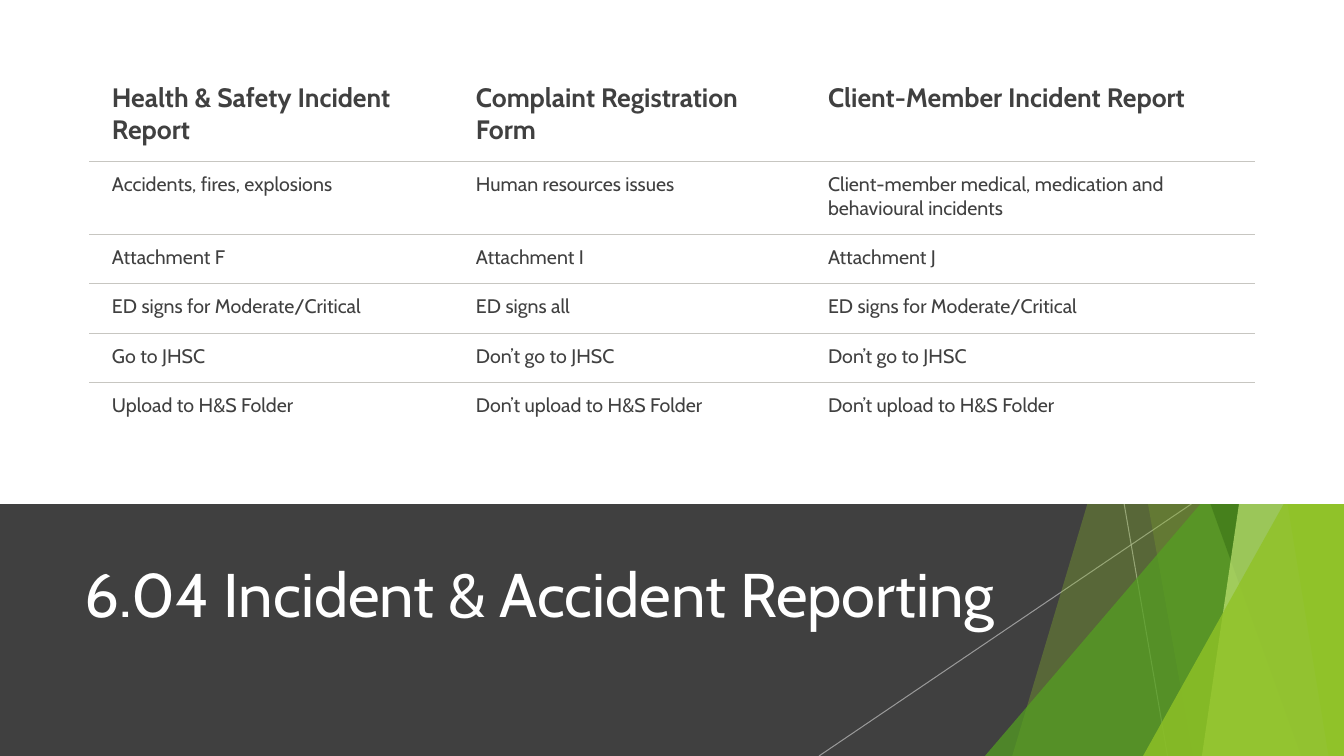
from lxml.etree import SubElement as Sub
from pptx import Presentation
from pptx.dml.color import RGBColor as RGB
from pptx.enum.shapes import MSO_CONNECTOR as Conn, MSO_SHAPE as Shape
from pptx.enum.text import MSO_ANCHOR as Anchor
from pptx.oxml import parse_xml
from pptx.oxml.ns import nsdecls, qn
from pptx.util import Pt

# Content
TITLE = "6.04 Incident & Accident Reporting"
ROWS = [
    ("Health & Safety Incident Report", "Complaint Registration Form",
     "Client-Member Incident Report"),
    ("Accidents, fires, explosions", "Human resources issues",
     "Client-member medical, medication and behavioural incidents"),
    ("Attachment F", "Attachment I", "Attachment J"),
    ("ED signs for Moderate/Critical", "ED signs all",
     "ED signs for Moderate/Critical"),
    ("Go to JHSC", "Don’t go to JHSC", "Don’t go to JHSC"),
    ("Upload to H&S Folder", "Don’t upload to H&S Folder",
     "Don’t upload to H&S Folder"),
]

# Format
WHITE = RGB(0xFF, 0xFF, 0xFF)
DARK = RGB(0x40, 0x40, 0x40)
GREY = RGB(0xBF, 0xBF, 0xBF)
RULE = RGB(0xC7, 0xC6, 0xC1)
LIME = RGB(0x90, 0xC2, 0x26)
GREEN = RGB(0x54, 0xA0, 0x21)
DEEP = RGB(0x3F, 0x78, 0x19)
PALE = RGB(0xC0, 0xE4, 0x74)
FONT = "Cabin"
HEAD = {"name": FONT, "size": Pt(19), "bold": True}
BODY = {"name": FONT, "size": Pt(14), "bold": False}
BIG = {"name": FONT, "size": Pt(44), "bold": False}
INSET = {"margin_left": Pt(15.8), "margin_top": Pt(7.9),
         "margin_right": Pt(11.5), "margin_bottom": Pt(7.9)}
FLUSH = {"word_wrap": True, "vertical_anchor": Anchor.MIDDLE}

# Layout
WIDE, HIGH, SPLIT = 960, 540, 360
COLS = [260, 251.5, 320.2]
TALL = [64.8, 52.2] + [35.3] * 4
RAYS = [(803, 834), (851, 585)]  # x at the split, x at the foot
# Facets: (top x, foot x, colour, opacity); wedges: (left, top, colour, opacity)
FACETS = [
    ("facet", 884, 723, LIME, 30),
    ("facet", 756, 852, LIME, 20),
    ("wedge", 703.5, 240, GREEN, 72),
    ("facet", 735, 929.5, DEEP, 70),
    ("facet", 938, 858.5, PALE, 70),
    ("facet", 861, 949, LIME, 65),
    ("wedge", 816.5, 283, LIME, 80),
]


def style(obj, fmt):
    for key, val in fmt.items():
        setattr(obj, key, val)


def fade(part, pct):
    for clr in part.iter(qn("a:srgbClr")):
        Sub(clr, qn("a:alpha"), val=str(pct * 1000))


def paint(shape, color, pct=100):
    shape.shadow.inherit = False
    shape.fill.solid()
    shape.fill.fore_color.rgb = color
    shape.line.fill.background()
    if pct < 100:
        fade(shape.fill._xPr, pct)


def write(frame, text, fmt, color):
    run = frame.paragraphs[0].add_run()
    run.text = text
    style(run.font, fmt)
    run.font.color.rgb = color


def border(cell, side):
    cell._tc.get_or_add_tcPr().append(parse_xml(
        f'<a:{side} {nsdecls("a")} w="9525"><a:solidFill>'
        f'<a:srgbClr val="{RULE}"/></a:solidFill></a:{side}>'))


deck = Presentation()
deck.slide_width, deck.slide_height = Pt(WIDE), Pt(HIGH)
slide = deck.slides.add_slide(deck.slide_layouts[6])
shapes = slide.shapes


def panel(top, high, color):
    paint(shapes.add_shape(Shape.RECTANGLE, 0, Pt(top), Pt(WIDE), Pt(high)), color)


# Dark band with thin rays
panel(SPLIT, HIGH - SPLIT, DARK)
for top, foot in RAYS:
    ray = shapes.add_connector(Conn.STRAIGHT, Pt(top), Pt(SPLIT), Pt(foot), Pt(HIGH))
    ray.line.color.rgb = GREY
    ray.line.width = Pt(0.75)
    fade(ray.line._ln, 70)
    Sub(ray._element.spPr, qn("a:effectLst"))

# Green facets, running up behind the white panel
for kind, a, b, color, pct in FACETS:
    if kind == "facet":
        pen = shapes.build_freeform(Pt(a), 0)
        pen.add_line_segments(
            [(Pt(WIDE), 0), (Pt(WIDE), Pt(HIGH)), (Pt(b), Pt(HIGH))])
        shape = pen.convert_to_shape()
    else:
        shape = shapes.add_shape(Shape.ISOSCELES_TRIANGLE, Pt(a), Pt(b),
                                 Pt(WIDE - a), Pt(HIGH - b))
        shape.adjustments[0] = 1
    paint(shape, color, pct)

# Title
box = shapes.add_textbox(Pt(53.5), Pt(375), Pt(677), Pt(104)).text_frame
style(box, FLUSH)
box.paragraphs[0].line_spacing = 0.9
write(box, TITLE, BIG, WHITE)

# White panel and table
panel(0, SPLIT, WHITE)
table = shapes.add_table(len(ROWS), len(COLS), Pt(64.2), Pt(50.4),
                         Pt(sum(COLS)), Pt(sum(TALL))).table
table.first_row = table.horz_banding = False
for col, wide in zip(table.columns, COLS):
    col.width = Pt(wide)
for i, (row, high) in enumerate(zip(table.rows, TALL)):
    row.height = Pt(high)
    for cell, text in zip(row.cells, ROWS[i]):
        style(cell, INSET)
        write(cell.text_frame, text, BODY if i else HEAD, DARK)
        if i > 0:
            border(cell, "lnT")
        if i < len(ROWS) - 1:
            border(cell, "lnB")
        cell.fill.background()

deck.save("out.pptx")
